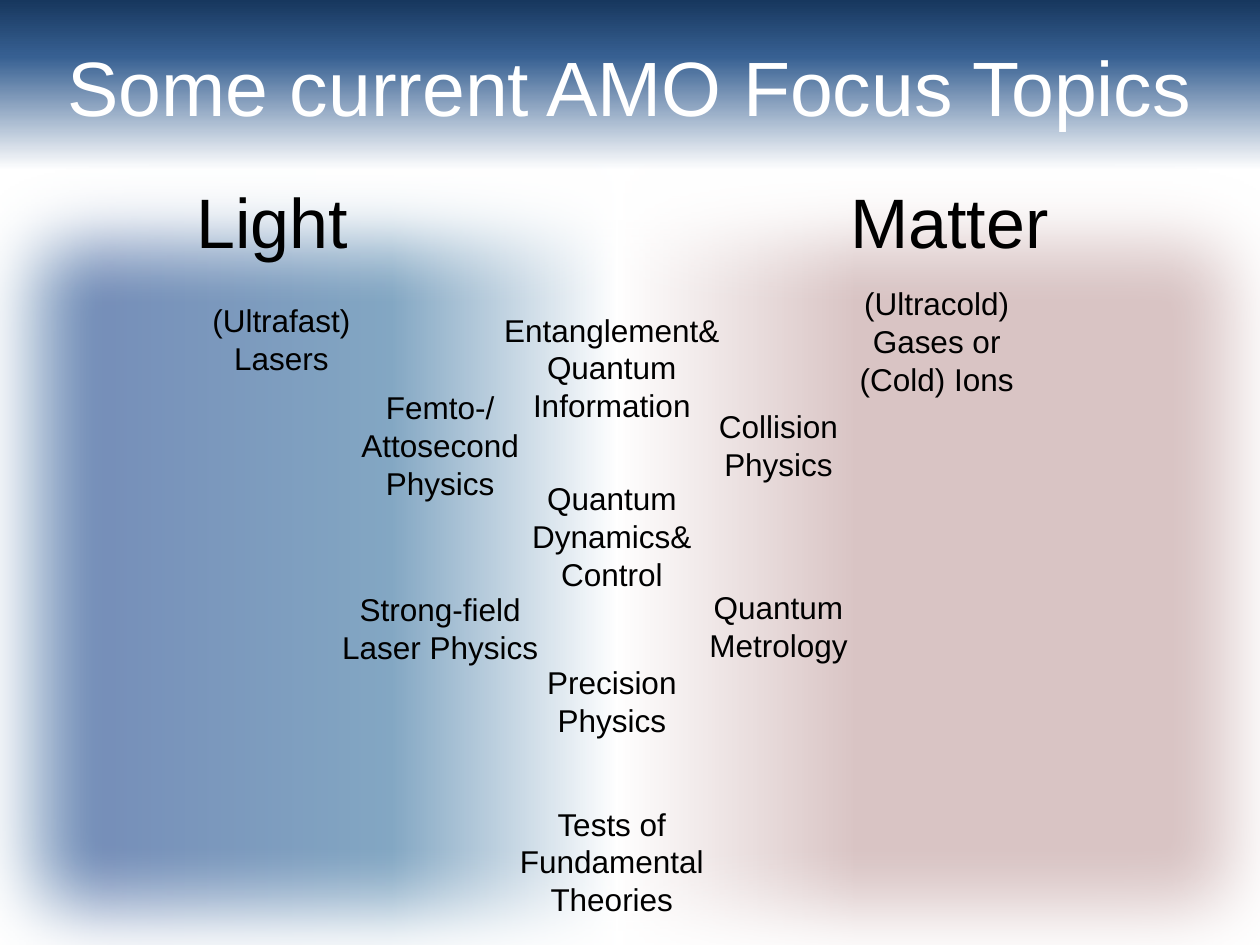
from dataclasses import dataclass

from lxml import etree
from pptx import Presentation
from pptx.dml.color import RGBColor
from pptx.enum.shapes import MSO_SHAPE
from pptx.enum.text import MSO_ANCHOR, MSO_AUTO_SIZE, PP_ALIGN
from pptx.oxml.ns import qn
from pptx.util import Cm, Pt

OVAL, RECTANGLE = MSO_SHAPE.OVAL, MSO_SHAPE.RECTANGLE
MIDDLE, CENTER, LEFT = MSO_ANCHOR.MIDDLE, PP_ALIGN.CENTER, PP_ALIGN.LEFT
GROW = MSO_AUTO_SIZE.SHAPE_TO_FIT_TEXT

FONT = "Arial"
BLACK, WHITE, YELLOW = "000000", "FFFFFF", "FFDF79"
SKY = [(0, "17375E"), (6, "376092"), (18, WHITE), (100, WHITE)]
LIGHT_TO_MATTER = [(0, "83A7C3"), (13, "768FB9"), (33, "83A7C3"),
                   (49, WHITE), (66, "D9C4C4")]
TOPIC_SIZE = 4.75
SOFT_EDGE = 1.76

# Left edges of the topic columns, in cm
LASER_X, FIELD_X, CENTER_X, METHOD_X, GAS_X = 3.3, 6.5, 9.96, 13.32, 16.51


@dataclass
class Topic:
    text: str
    left: float
    top: float


@dataclass
class Heading:
    text: str
    left: float
    width: float


TOPICS = [
    Topic("(Ultracold)\nGases or\n(Cold) Ions", GAS_X, 4.5),
    Topic("(Ultrafast)\nLasers", LASER_X, 4.45),
    Topic("Femto-/\nAttosecond\nPhysics", FIELD_X, 6.6),
    Topic("Strong-field\nLaser Physics", FIELD_X, 10.29),
    Topic("Quantum\nMetrology", METHOD_X, 10.24),
    Topic("Quantum\nDynamics&\nControl", CENTER_X, 8.43),
    Topic("Precision\nPhysics", CENTER_X, 11.76),
    Topic("Tests of\nFundamental\nTheories", CENTER_X, 14.99),
    Topic("Entanglement&\nQuantum\nInformation", CENTER_X, 5.03),
    Topic("Collision\nPhysics", METHOD_X, 6.6),
]
HEADINGS = [Heading("Light", 3.71, 3.61), Heading("Matter", 16.89, 4.55)]


def color(value: str) -> RGBColor:
    return RGBColor.from_string(value)


def set_gradient(fill, element, stops: list, angle: float) -> None:
    fill.gradient()
    fill.gradient_angle = angle
    stop_list = element.find(".//" + qn("a:gsLst"))
    for old_stop in list(stop_list):
        stop_list.remove(old_stop)
    for percent, value in stops:
        stop = etree.SubElement(stop_list, qn("a:gs"), pos=str(percent * 1000))
        etree.SubElement(stop, qn("a:srgbClr"), val=value)


def set_text(text_frame, text: str, size: float, value: str, alignment) -> None:
    text_frame.text = text
    for paragraph in text_frame.paragraphs:
        paragraph.alignment = alignment
        for run in paragraph.runs:
            run.font.name = FONT
            run.font.size = Pt(size)
            run.font.color.rgb = color(value)


def add_soft_shape(slide, kind, left: float, top: float, width: float, height: float):
    shape = slide.shapes.add_shape(kind, Cm(left), Cm(top), Cm(width), Cm(height))
    shape.line.fill.background()
    shape.shadow.inherit = False
    effects = shape._element.spPr.find(qn("a:effectLst"))
    etree.SubElement(effects, qn("a:softEdge"), rad=str(Cm(SOFT_EDGE)))
    return shape


def add_topic(slide, topic: Topic) -> None:
    shape = add_soft_shape(slide, OVAL, topic.left, topic.top, TOPIC_SIZE, TOPIC_SIZE)
    shape.fill.solid()
    shape.fill.fore_color.rgb = color(YELLOW)
    shape.text_frame.word_wrap = False
    shape.text_frame.vertical_anchor = MIDDLE
    set_text(shape.text_frame, topic.text, 18, BLACK, CENTER)


def add_heading(slide, heading: Heading) -> None:
    box = slide.shapes.add_textbox(Cm(heading.left), Cm(3.48), Cm(heading.width), Cm(1.96))
    box.text_frame.word_wrap = False
    box.text_frame.auto_size = GROW
    set_text(box.text_frame, heading.text, 40, BLACK, LEFT)


def main() -> None:
    presentation = Presentation()
    presentation.slide_width, presentation.slide_height = Cm(25.4), Cm(19.05)
    slide = presentation.slides.add_slide(presentation.slide_layouts[5])

    # Background and the soft light-to-matter panel behind the title
    set_gradient(slide.background.fill, slide._element, SKY, 270)
    panel = add_soft_shape(slide, RECTANGLE, -1.5, 2.72, 28.5, 17.8)
    set_gradient(panel.fill, panel._element, LIGHT_TO_MATTER, 0)

    # Title, brought in front of the panel
    title = slide.shapes.title
    title.left, title.top, title.width, title.height = Cm(0), Cm(0.53), Cm(25.4), Cm(2.39)
    set_text(title.text_frame, "Some current AMO Focus Topics", 44, WHITE, CENTER)
    panel._element.addnext(title._element)

    # Topics and column headings
    for topic in TOPICS:
        add_topic(slide, topic)
    for heading in HEADINGS:
        add_heading(slide, heading)

    presentation.save("out.pptx")


if __name__ == "__main__":
    main()
